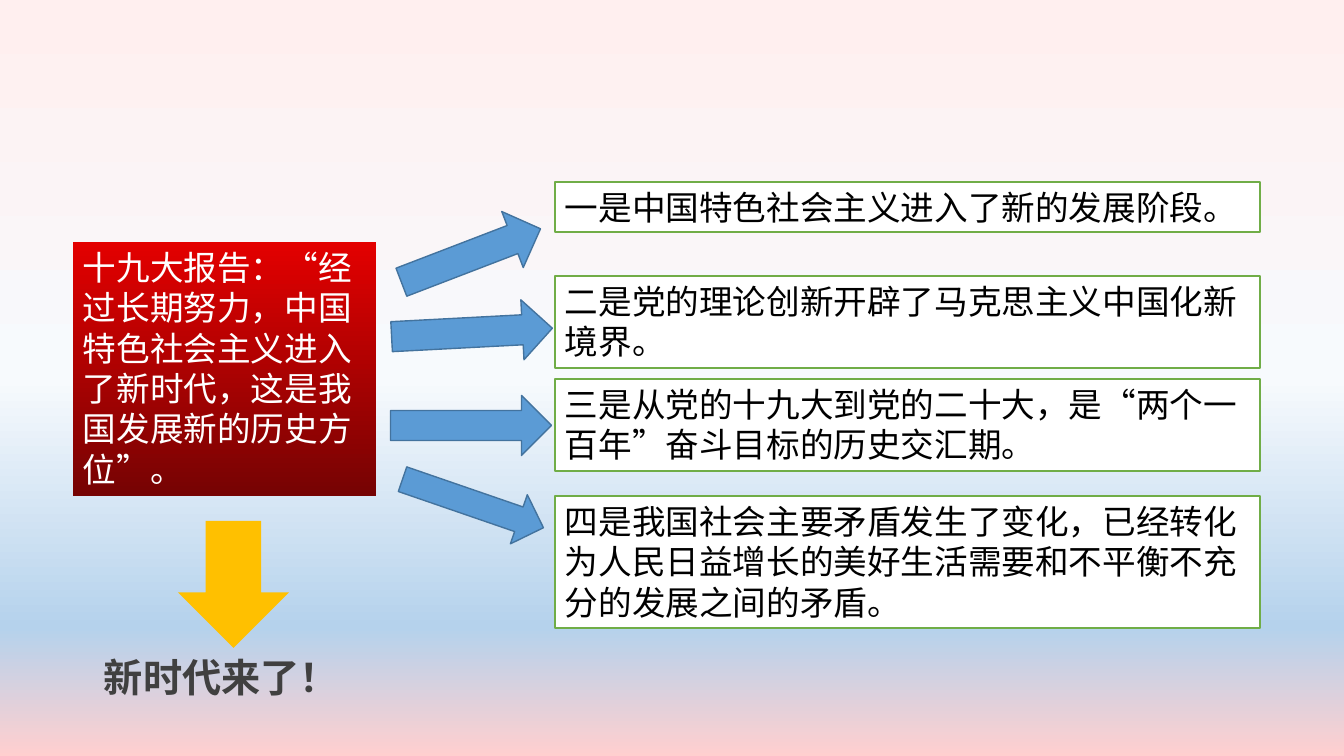
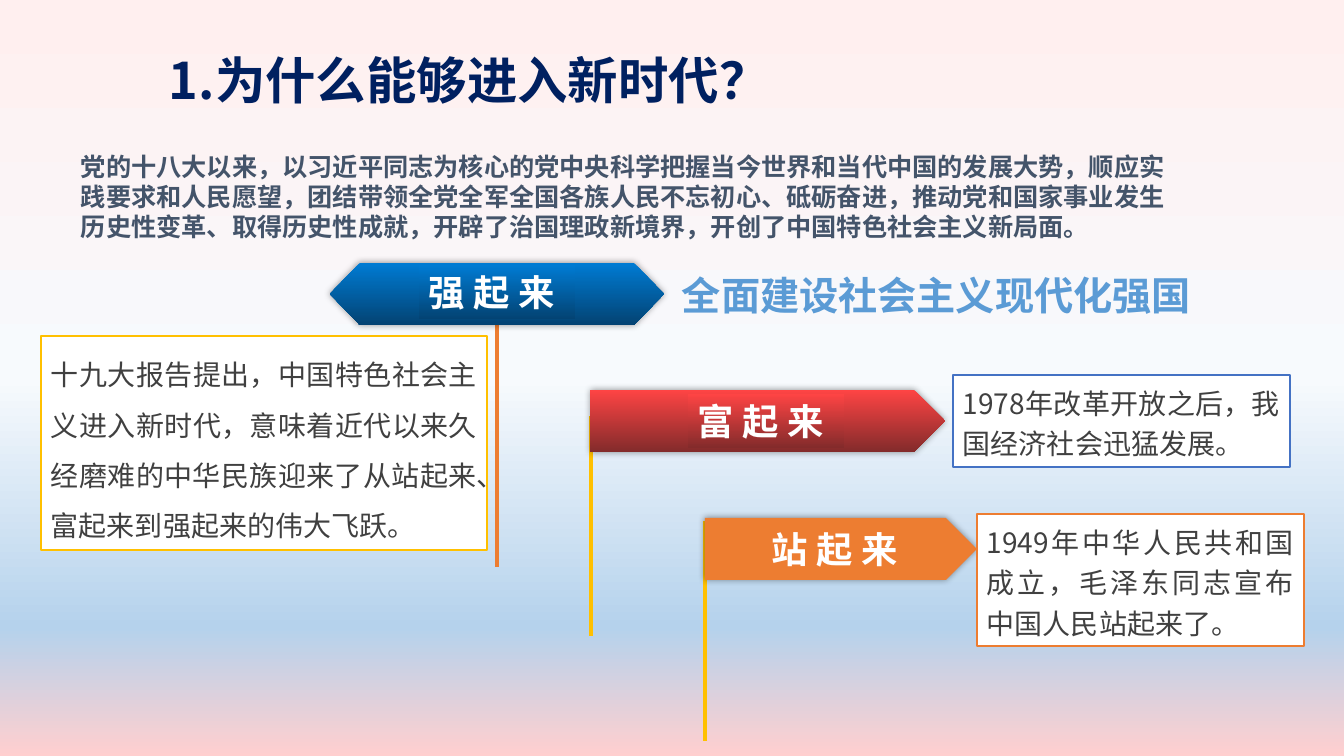
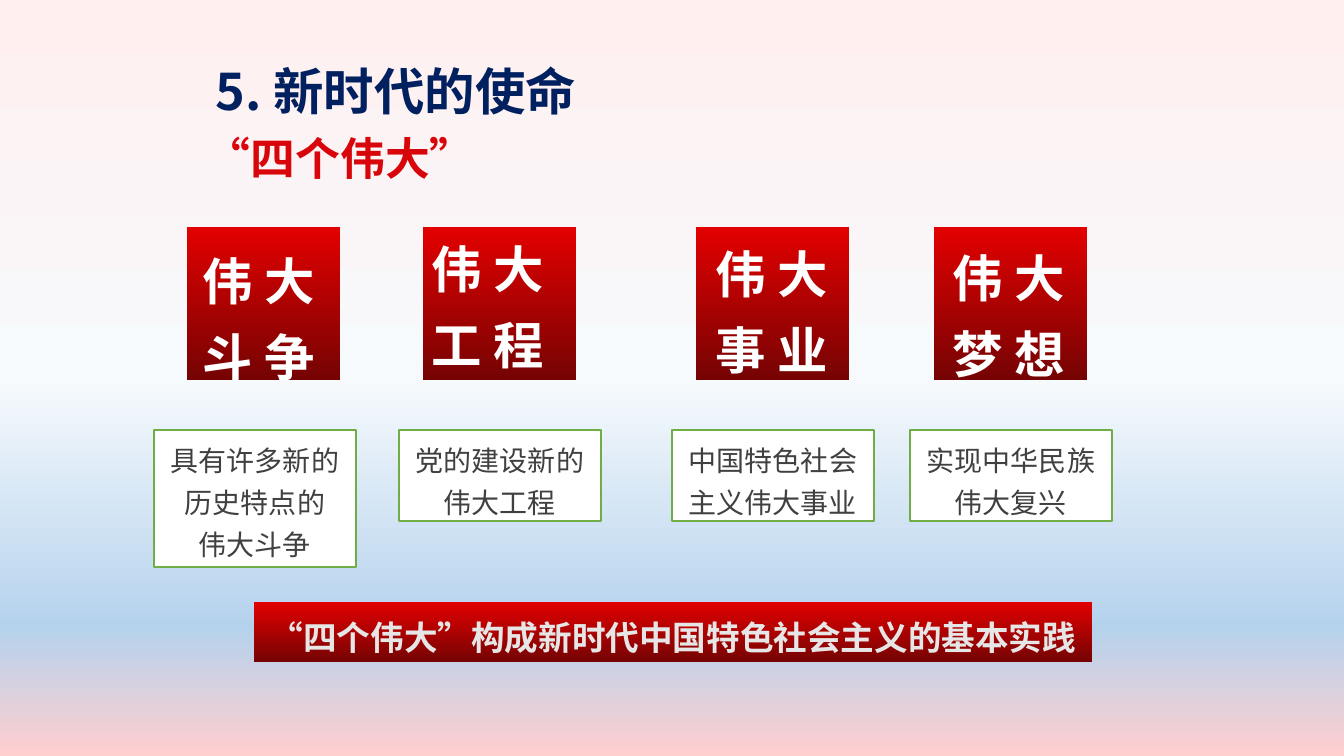
from dataclasses import dataclass

from lxml import etree
from pptx import Presentation
from pptx import util as u
from pptx.dml.color import RGBColor
from pptx.enum import shapes, text
from pptx.oxml.ns import qn

PX = 9144000 / 1008  # EMU in one px
SLIDE_W, SLIDE_H = 1344, 756


@dataclass(frozen=True)
class Theme:
    font: str = "Noto Sans CJK SC"
    latin_font: str = "Calibri"
    backdrop: tuple = ((0, "FFEFEF"), (50, "F7FAFD"), (83, "B5D2EC"), (100, "FFCFCF"))
    red_fade: tuple = ((0, "E30000"), (100, "760303"))
    blue_fade: tuple = ((0, "007BD3"), (100, "034373"))
    rose_fade: tuple = ((0, "FE4444"), (100, "832B2B"))
    white: str = "FFFFFF"
    black: str = "000000"
    body_grey: str = "404040"
    slate: str = "44546A"
    silver: str = "E7E6E6"
    navy: str = "002060"
    red: str = "D8060A"
    blue: str = "5B9BD5"
    blue_edge: str = "43739E"
    royal: str = "4472C4"
    green: str = "70AD47"
    gold: str = "FFC000"
    orange: str = "ED7D31"
    title_size: int = 36
    subtitle_size: int = 32
    heading_size: int = 28
    flag_size: int = 26
    lead_size: int = 24
    body_size: int = 20
    intro_size: int = 18


THEME = Theme()
LEFT, CENTER, JUSTIFY = (text.PP_ALIGN.LEFT, text.PP_ALIGN.CENTER, text.PP_ALIGN.JUSTIFY)


def emu(*lengths):
    return [u.Emu(round(length * PX)) for length in lengths]


def rgb(colour):
    return RGBColor.from_string(colour)


def paint(fill, element, colour):
    """Fill with one colour, or from top to bottom with (percent, colour) stops."""
    if isinstance(colour, str):
        fill.solid()
        fill.fore_color.rgb = rgb(colour)
        return
    fill.gradient()
    fill.gradient_angle = 270
    stops = next(element.iter(qn("a:gsLst")))
    stops.clear()
    for percent, stop_colour in colour:
        stop = etree.SubElement(stops, qn("a:gs"), pos=str(percent * 1000))
        etree.SubElement(stop, qn("a:srgbClr"), val=stop_colour)


def finish(shape, fill, line=None, glow=False):
    """Set fill and outline; glow is a soft shadow on all sides."""
    shape.shadow.inherit = False
    paint(shape.fill, shape._element, fill)
    if line:
        shape.line.color.rgb = rgb(line)
        shape.line.width = u.Pt(1)
    else:
        shape.line.fill.background()
    if glow:
        effects = next(shape._element.iter(qn("a:effectLst")))
        shadow = etree.SubElement(effects, qn("a:outerShdw"),
                                  blurRad=str(u.Pt(5)), dist="0")
        tint = etree.SubElement(shadow, qn("a:srgbClr"), val=THEME.black)
        etree.SubElement(tint, qn("a:alpha"), val="40000")


def add_preset(slide, kind, box, fill, line=None, glow=False):
    shape = slide.shapes.add_shape(kind, *emu(*box))
    finish(shape, fill, line, glow)
    return shape


def add_text(slide, box, words, size, colour, bold=False, align=LEFT, spacing=None,
             fill=None, line=None, wrap=True, tracking=0, font=THEME.font):
    """Write one paragraph per line of words, in a panel if a fill is given."""
    if fill:
        holder = add_preset(slide, shapes.MSO_SHAPE.RECTANGLE, box, fill, line)
    else:
        holder = slide.shapes.add_textbox(*emu(*box))
    frame = holder.text_frame
    frame.word_wrap = wrap
    frame.auto_size = text.MSO_AUTO_SIZE.SHAPE_TO_FIT_TEXT
    frame.vertical_anchor = text.MSO_ANCHOR.TOP
    frame.text = words
    for paragraph in frame.paragraphs:
        paragraph.alignment = align
        if spacing:
            paragraph.line_spacing = spacing
        paragraph.font.size = u.Pt(size)
        paragraph.font.bold = bold
        paragraph.font.color.rgb = rgb(colour)
        paragraph.font.name = font
        defaults = paragraph._p.pPr.find(qn("a:defRPr"))
        etree.SubElement(defaults, qn("a:ea"), typeface=THEME.font)
        if tracking:
            defaults.set("spc", str(tracking * 100))


def add_title(slide, box, words):
    add_text(slide, box, words, THEME.title_size, THEME.navy, bold=True, spacing=1.2)


def add_pole(slide, x, top, bottom, colour):
    pole = slide.shapes.add_connector(shapes.MSO_CONNECTOR.STRAIGHT,
                                      *emu(x, top, x, bottom))
    pole.line.color.rgb = rgb(colour)
    pole.line.width = u.Pt(3)
    etree.SubElement(pole._element.spPr, qn("a:effectLst"))


def add_flag_label(slide, x, y, words, fill=None):
    add_text(slide, (x, y, 156, 54), words, THEME.flag_size, THEME.white, bold=True,
             fill=fill, wrap=False, tracking=6)


def build_report(slide):
    add_preset(slide, shapes.MSO_SHAPE.RECTANGLE, (73, 242, 303, 254), THEME.red_fade)
    add_text(slide, (73, 242, 322, 254),
             "十九大报告：“经过长期努力，中国特色社会主义进入了新时代，这是我国发展新的历史方位”。",
             THEME.lead_size, THEME.white)
    add_preset(slide, shapes.MSO_SHAPE.DOWN_ARROW, (178, 521, 111, 127), THEME.gold)
    add_text(slide, (94, 648, 258, 57), "新时代来了！", THEME.heading_size,
             THEME.body_grey, bold=True, wrap=False)

    for box, rotation in (((442, 252, 60, 161), 87), ((441, 181, 60, 149), 69),
                          ((441, 345, 60, 161), 90), ((447, 429, 52, 149), 109)):
        arrow = add_preset(slide, shapes.MSO_SHAPE.UP_ARROW, box,
                           THEME.blue, THEME.blue_edge)
        arrow.rotation = rotation

    for top, height, point in (
            (182, 50, "一是中国特色社会主义进入了新的发展阶段。"),
            (276, 92, "二是党的理论创新开辟了马克思主义中国化新境界。"),
            (379, 92, "三是从党的十九大到党的二十大，是“两个一百年”奋斗目标的历史交汇期。"),
            (496, 132, "四是我国社会主要矛盾发生了变化，已经转化为人民日益增长的美好生活需要"
                       "和不平衡不充分的发展之间的矛盾。")):
        add_text(slide, (555, top, 705, height), point, THEME.lead_size, THEME.black,
                 fill=THEME.white, line=THEME.green)


def build_reasons(slide):
    for x, top, bottom, colour in ((497, 322, 567, THEME.orange),
                                   (591, 416, 636, THEME.gold),
                                   (705, 521, 741, THEME.gold)):
        add_pole(slide, x, top, bottom, colour)

    outline = slide.shapes.build_freeform(360, 263, scale=PX)
    outline.add_line_segments([(634, 263), (664, 294), (634, 325), (360, 325), (330, 294)])
    finish(outline.convert_to_shape(), THEME.blue_fade, glow=True)
    add_flag_label(slide, 419, 265, "强起来", THEME.blue_fade)

    pentagon = shapes.MSO_SHAPE.PENTAGON
    add_preset(slide, pentagon, (590, 390, 355, 62), THEME.rose_fade, glow=True)
    add_flag_label(slide, 688, 394, "富起来", THEME.rose_fade)
    add_preset(slide, pentagon, (705, 518, 272, 62), THEME.orange, glow=True)
    add_flag_label(slide, 762, 522, "站起来")

    for box, edge, spacing, note in (
            ((41, 336, 446, 214), THEME.gold, 1.5,
             "十九大报告提出，中国特色社会主义进入新时代，意味着近代以来久经磨难的中华民族"
             "迎来了从站起来、富起来到强起来的伟大飞跃。"),
            ((977, 514, 327, 132), THEME.orange, 1.2,
             "1949年中华人民共和国成立，毛泽东同志宣布中国人民站起来了。"),
            ((953, 375, 337, 92), THEME.royal, 1.2,
             "1978年改革开放之后，我国经济社会迅猛发展。")):
        add_text(slide, box, note, THEME.body_size, THEME.body_grey, align=JUSTIFY,
                 spacing=spacing, fill=THEME.white, line=edge)

    add_text(slide, (672, 257, 605, 62), "全面建设社会主义现代化强国", THEME.heading_size,
             THEME.blue, bold=True, align=JUSTIFY, spacing=1.2)
    add_title(slide, (159, 32, 631, 84), "1.为什么能够进入新时代？")
    add_text(slide, (71, 146, 1117, 102),
             "党的十八大以来，以习近平同志为核心的党中央科学把握当今世界和当代中国的发展大势，"
             "顺应实践要求和人民愿望，团结带领全党全军全国各族人民不忘初心、砥砺奋进，"
             "推动党和国家事业发生历史性变革、取得历史性成就，开辟了治国理政新境界，"
             "开创了中国特色社会主义新局面。",
             THEME.intro_size, THEME.slate, bold=True, font=THEME.latin_font)


def build_mission(slide):
    for tile_x, label_x, label_y, label, note_x, note_h, note in (
            (187, 193, 230, "伟 大\n斗 争", 154, 137, "具有许多新的历史特点的\n伟大斗争"),
            (423, 422, 218, "伟 大\n工 程", 399, 91, "党的建设新的伟大工程"),
            (696, 706, 223, "伟 大\n事 业", 672, 91, "中国特色社会主义伟大事业"),
            (934, 943, 227, "伟 大\n梦 想", 910, 91, "实现中华民族伟大复兴")):
        add_preset(slide, shapes.MSO_SHAPE.RECTANGLE, (tile_x, 227, 153, 153),
                   THEME.red_fade)
        add_text(slide, (label_x, label_y, 134, 162), label, THEME.title_size, THEME.white,
                 bold=True, align=JUSTIFY, spacing=1.25, wrap=False)
        add_text(slide, (note_x, 430, 202, note_h), note, THEME.body_size,
                 THEME.body_grey, align=CENTER, spacing=1.25,
                 fill=THEME.white, line=THEME.green)

    add_text(slide, (196, 126, 365, 65), "“四个伟大”", THEME.subtitle_size, THEME.red,
             bold=True)
    add_text(slide, (254, 602, 838, 60), "“四个伟大”构成新时代中国特色社会主义的基本实践",
             THEME.lead_size, THEME.silver, bold=True, align=CENTER, spacing=1.25,
             fill=THEME.red_fade)
    add_title(slide, (206, 43, 405, 84), "5. 新时代的使命")


def main():
    deck = Presentation()
    deck.slide_width, deck.slide_height = emu(SLIDE_W, SLIDE_H)
    master = deck.slide_master
    paint(master.background.fill, master.element, THEME.backdrop)
    blank = deck.slide_layouts[6]
    for build in (build_report, build_reasons, build_mission):
        build(deck.slides.add_slide(blank))
    deck.save("out.pptx")


if __name__ == "__main__":
    main()
